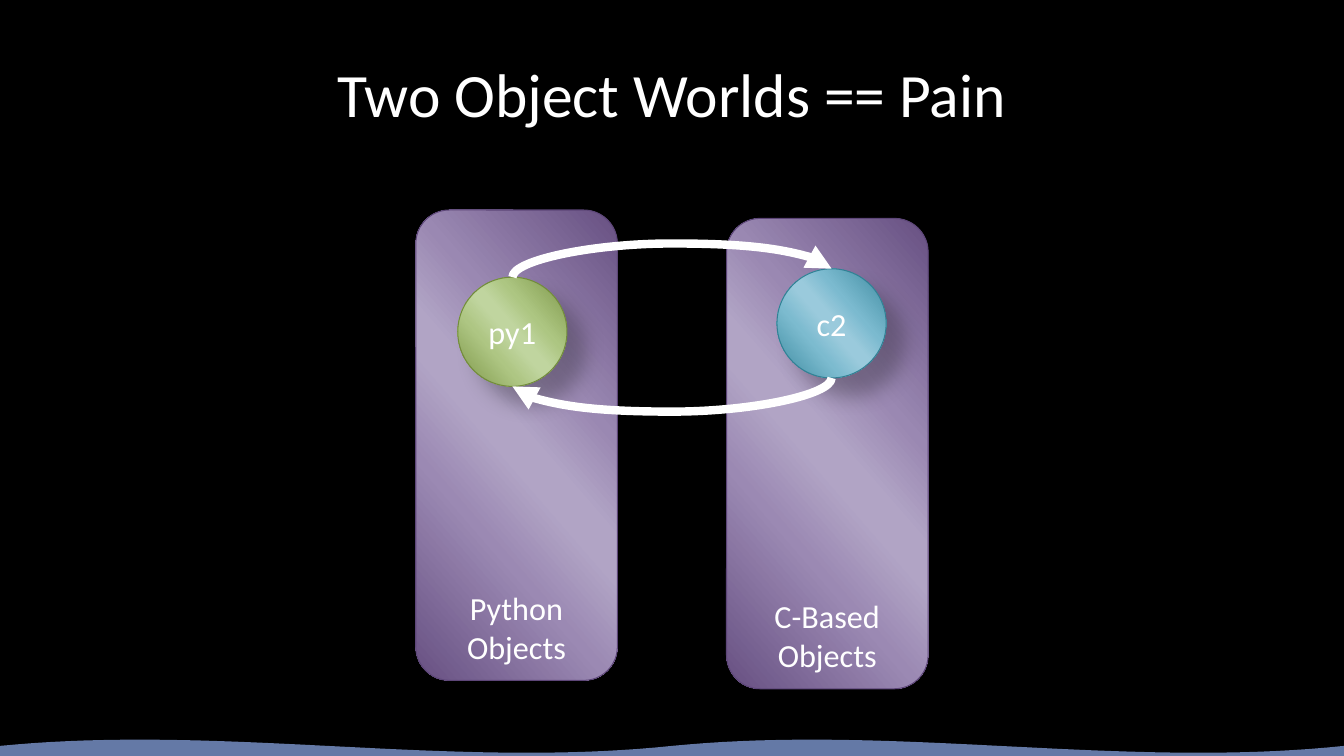
from lxml import etree
from pptx import Presentation
from pptx.dml.color import RGBColor
from pptx.enum import shapes, text
from pptx.oxml.ns import qn
from pptx.util import Pt

TITLE = "Two Object Worlds == Pain"
FONT = "Calibri"
COLORS = {"back": "000000", "ink": "FFFFFF", "wave": "6479A6", "shadow": "000000"}
# Gradient stop colours, then the outline colour
STYLES = {
    "panel": (("675082", "9A88B2", "B1A4C5", "B1A4C5", "9B89B3", "675082"), "5D4678"),
    "python": (("7C9647", "ADC682", "C0D59F", "C0D59F", "AEC683", "7C9647"), "728B3D"),
    "c": (("3C8A9F", "7BBACF", "9ACADC", "9ACADC", "7CBBCF", "3C8A9F"), "328094"),
}
STOPS = (0, 33, 47, 53, 68, 100)
# Panel left and top, panel lines, circle left and top, circle label, circle style
WORLDS = [
    ((297, 150), ["Python Objects"], (327, 198), "py1", "python"),
    ((519, 156), ["C-Based", "Objects"], (555, 192), "c2", "c"),
]
PANEL_SIZE = (144, 336)
CIRCLE = 78
SLIDE_WIDTH, SLIDE_HEIGHT = 960, 540
WAVE_HEIGHTS = (532.8, 517, 549.4, 532.8)
WAVE_BOTTOM, WAVE_STEPS = 544, 40


def rgb(name):
    return RGBColor.from_string(COLORS.get(name, name))


def write(frame, lines, size):
    for index, line in enumerate(lines):
        para = frame.paragraphs[0] if index == 0 else frame.add_paragraph()
        para.alignment = text.PP_ALIGN.CENTER
        span = para.add_run()
        span.text = line
        span.font.size = Pt(size)
        span.font.name = FONT
        span.font.color.rgb = rgb("ink")


def cast_shadow(shape):
    shape.shadow.inherit = False
    effects = shape._element.spPr.find(qn("a:effectLst"))
    outer = etree.SubElement(effects, qn("a:outerShdw"), blurRad=str(Pt(15)),
                             dist=str(Pt(18)), dir=str(45 * 60000), rotWithShape="0")
    color = etree.SubElement(outer, qn("a:srgbClr"), val=COLORS["shadow"])
    etree.SubElement(color, qn("a:alpha"), val="26000")


def add_object(page, kind, place, size, style, lines, anchor):
    """Add a glossy, shadowed shape with centred text."""
    shape = page.shapes.add_shape(kind, *map(Pt, place + size))
    colors, outline = STYLES[style]
    shape.fill.gradient()
    shape.fill.gradient_angle = 221
    stops = shape._element.spPr.find(qn("a:gradFill")).find(qn("a:gsLst"))
    stops.clear()
    for position, color in zip(STOPS, colors):
        stop = etree.SubElement(stops, qn("a:gs"), pos=str(position * 1000))
        etree.SubElement(stop, qn("a:srgbClr"), val=color)
    shape.line.color.rgb = rgb(outline)
    shape.line.width = Pt(0.75)
    cast_shadow(shape)
    shape.text_frame.word_wrap = True
    shape.text_frame.vertical_anchor = anchor
    write(shape.text_frame, lines, 23)


def add_arc_arrow(page, start, end):
    """Add a curved connector, turned 90 degrees so it leaves vertically."""
    middle_x, middle_y = (start[0] + end[0]) / 2, (start[1] + end[1]) / 2
    half_x, half_y = (end[1] - start[1]) / 2, (start[0] - end[0]) / 2
    arrow = page.shapes.add_connector(
        shapes.MSO_CONNECTOR.CURVE,
        Pt(middle_x - half_x), Pt(middle_y - half_y),
        Pt(middle_x + half_x), Pt(middle_y + half_y))
    arrow.line.color.rgb = rgb("ink")
    arrow.line.width = Pt(6)
    properties = arrow._element.spPr
    properties.find(qn("a:xfrm")).set("rot", str(90 * 60000))
    guides = properties.find(qn("a:prstGeom")).find(qn("a:avLst"))
    etree.SubElement(guides, qn("a:gd"), name="adj1", fmla="val 400000")
    etree.SubElement(properties.find(qn("a:ln")), qn("a:tailEnd"), type="triangle")
    etree.SubElement(properties, qn("a:effectLst"))


def add_wave(page):
    """Add the footer band, with two equal cubic waves along its top."""
    a, b, c, d = WAVE_HEIGHTS
    points = []
    for step in range(2 * WAVE_STEPS + 1):
        t = step % WAVE_STEPS / WAVE_STEPS
        y = (a * (1 - t) ** 3 + 3 * b * t * (1 - t) ** 2
             + 3 * c * t ** 2 * (1 - t) + d * t ** 3)
        points.append((Pt(SLIDE_WIDTH * step / (2 * WAVE_STEPS)), Pt(y)))
    points += [(Pt(SLIDE_WIDTH), Pt(WAVE_BOTTOM)), (0, Pt(WAVE_BOTTOM))]
    outline = page.shapes.build_freeform(*points[0])
    outline.add_line_segments(points[1:], close=True)
    wave = outline.convert_to_shape()
    wave.fill.solid()
    wave.fill.fore_color.rgb = rgb("wave")
    wave.line.fill.background()
    cast_shadow(wave)


def main():
    deck = Presentation()
    deck.slide_width, deck.slide_height = Pt(SLIDE_WIDTH), Pt(SLIDE_HEIGHT)
    page = deck.slides.add_slide(deck.slide_layouts[5])
    page.background.fill.solid()
    page.background.fill.fore_color.rgb = rgb("back")

    add_wave(page)
    title = page.shapes.title
    title.left, title.top, title.width, title.height = map(Pt, (48, 21.6, 864, 90))
    title.text_frame.vertical_anchor = text.MSO_ANCHOR.MIDDLE
    write(title.text_frame, [TITLE], 44)

    for place, lines, *_ in WORLDS:
        add_object(page, shapes.MSO_SHAPE.ROUNDED_RECTANGLE, place, PANEL_SIZE,
                   "panel", lines, text.MSO_ANCHOR.BOTTOM)
    tops, bottoms = [], []
    for _, _, place, label, style in WORLDS:
        add_object(page, shapes.MSO_SHAPE.OVAL, place, (CIRCLE, CIRCLE),
                   style, [label], text.MSO_ANCHOR.MIDDLE)
        tops.append((place[0] + CIRCLE / 2, place[1]))
        bottoms.append((place[0] + CIRCLE / 2, place[1] + CIRCLE))
    add_arc_arrow(page, *tops)
    add_arc_arrow(page, *reversed(bottoms))
    deck.save("out.pptx")


if __name__ == "__main__":
    main()
